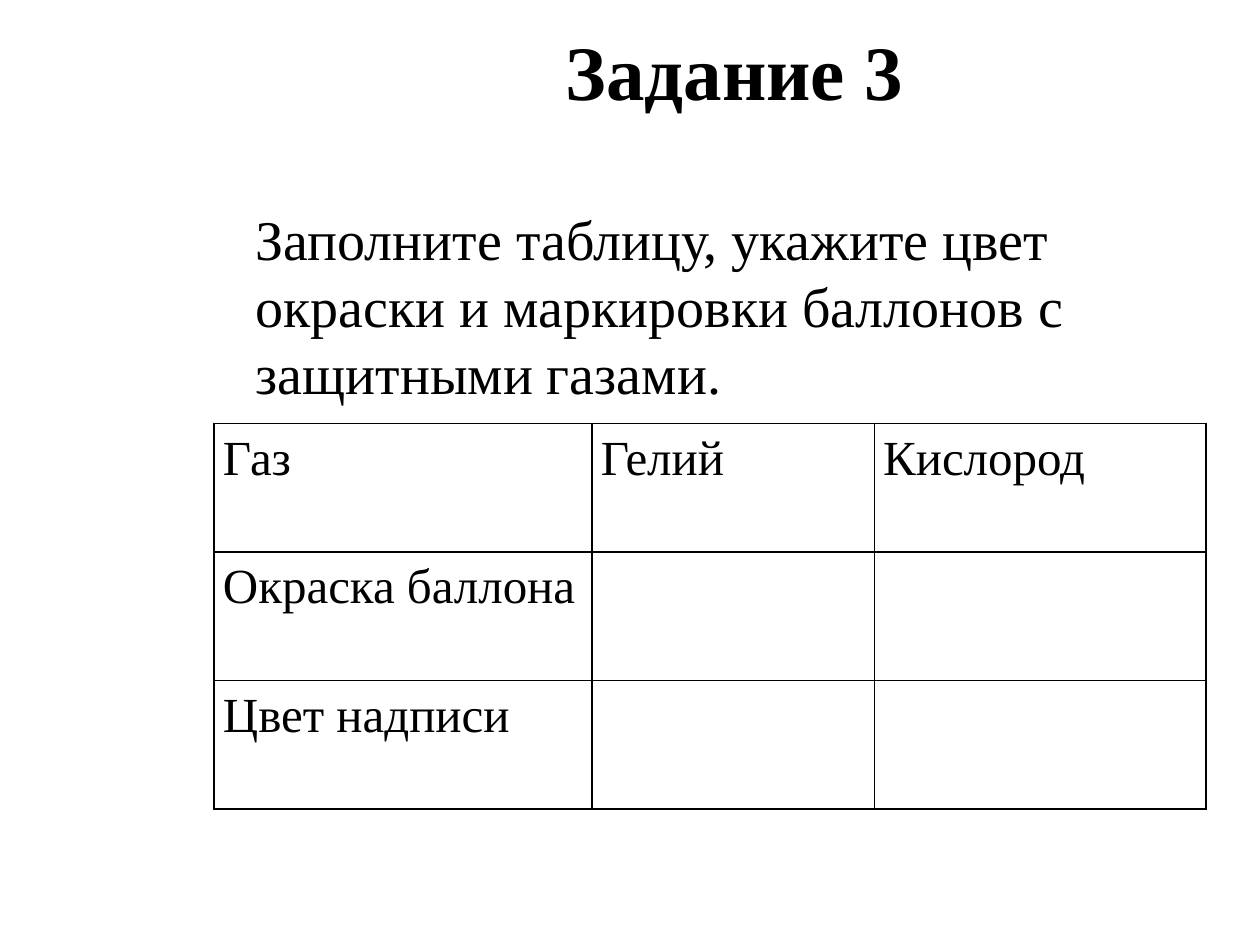
from dataclasses import dataclass

from lxml import etree
from pptx import Presentation
from pptx.dml.color import RGBColor
from pptx.enum.text import MSO_ANCHOR, PP_ALIGN
from pptx.oxml.ns import qn
from pptx.util import Inches, Pt

TOP = MSO_ANCHOR.TOP
CENTER = PP_ALIGN.CENTER
TITLE_ONLY = 5


@dataclass(frozen=True)
class Theme:
    font: str = "Times New Roman"
    ink: str = "000000"
    paper: str = "FFFFFF"
    title_size: int = 44
    task_size: int = 32
    cell_size: int = 28
    title_border: float = 1.5
    table_border: float = 1


THEME = Theme()
TEXT_LEFT, TEXT_WIDTH = 1.93, 7.8
TABLE_LEFT, TABLE_TOP = 1.7, 3.36
COLUMN_WIDTHS = (3, 2.24, 2.63)
ROW_HEIGHT = 1.02
GAS_ROWS = (
    ("Газ", "Гелий", "Кислород"),
    ("Окраска баллона", "", ""),
    ("Цвет надписи", "", ""),
)


def style_paragraph(paragraph, size, spacing, bold=False):
    paragraph.line_spacing = spacing
    font = paragraph.font
    font.name = THEME.font
    font.size = Pt(size)
    font.bold = bold
    font.color.rgb = RGBColor.from_string(THEME.ink)


def add_title(slide, text):
    title = slide.shapes.title
    title.left, title.top = Inches(TEXT_LEFT), Inches(0.3)
    title.width, title.height = Inches(TEXT_WIDTH), Inches(1.25)
    paper = RGBColor.from_string(THEME.paper)
    title.fill.solid()
    title.fill.fore_color.rgb = paper
    title.line.color.rgb = paper
    title.line.width = Pt(THEME.title_border)
    frame = title.text_frame
    frame.text = text
    frame.vertical_anchor = TOP
    frame.margin_top = 0
    heading = frame.paragraphs[0]
    heading.alignment = CENTER
    style_paragraph(heading, THEME.title_size, 0.85, bold=True)


def add_task(slide, text):
    task = slide.shapes.add_textbox(
        Inches(TEXT_LEFT), Inches(1.57), Inches(TEXT_WIDTH), Inches(2.02))
    frame = task.text_frame
    frame.word_wrap = True
    frame.vertical_anchor = TOP
    frame.text = text
    style_paragraph(frame.paragraphs[0], THEME.task_size, 1)


def add_borders(cell):
    properties = cell._tc.get_or_add_tcPr()
    # Border lines must precede the cell fill.
    for position, side in enumerate(("lnL", "lnR", "lnT", "lnB")):
        line = etree.Element(qn(f"a:{side}"), w=str(Pt(THEME.table_border)))
        fill = etree.SubElement(line, qn("a:solidFill"))
        etree.SubElement(fill, qn("a:srgbClr"), val=THEME.ink)
        properties.insert(position, line)


def format_cell(cell, text):
    cell.fill.background()
    add_borders(cell)
    cell.margin_left = cell.margin_right = Inches(0.07)
    cell.margin_top = cell.margin_bottom = 0
    cell.text = text
    paragraph = cell.text_frame.paragraphs[0]
    paragraph.space_after = Pt(10)
    style_paragraph(paragraph, THEME.cell_size, 1.15)


def add_gas_table(slide):
    table = slide.shapes.add_table(
        len(GAS_ROWS), len(COLUMN_WIDTHS), Inches(TABLE_LEFT), Inches(TABLE_TOP),
        Inches(sum(COLUMN_WIDTHS)), Inches(ROW_HEIGHT * len(GAS_ROWS))).table
    table.first_row = table.horz_banding = False
    for column, width in zip(table.columns, COLUMN_WIDTHS):
        column.width = Inches(width)
    for row, texts in zip(table.rows, GAS_ROWS):
        row.height = Inches(ROW_HEIGHT)
        for cell, text in zip(row.cells, texts):
            format_cell(cell, text)


def main():
    presentation = Presentation()
    presentation.slide_width = Inches(10)
    presentation.slide_height = Inches(7.5)
    slide = presentation.slides.add_slide(presentation.slide_layouts[TITLE_ONLY])
    add_title(slide, "Задание 3")
    add_gas_table(slide)
    add_task(slide, "Заполните таблицу, укажите цвет окраски и маркировки "
                    "баллонов с защитными газами.")
    presentation.save("out.pptx")


if __name__ == "__main__":
    main()
